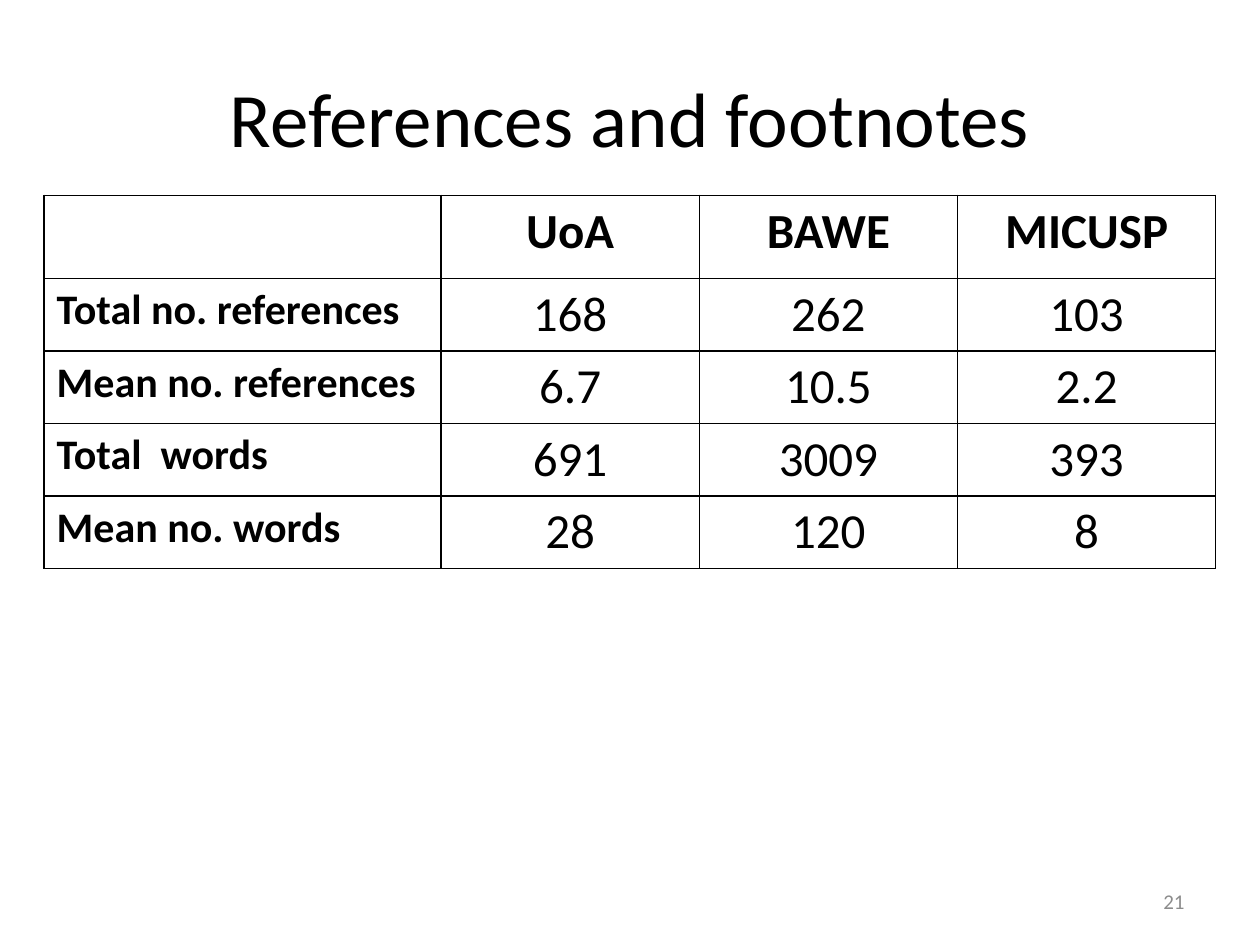
import pptx
import pptx.util
import pptx.dml.color
import pptx.enum.text
import pptx.oxml
import pptx.oxml.ns

Inches, Pt = pptx.util.Inches, pptx.util.Pt
ALIGN = pptx.enum.text.PP_ALIGN
MIDDLE = pptx.enum.text.MSO_ANCHOR.MIDDLE


def style(para, size, color, align, bold=False):
    font = para.font
    font.name, font.size, font.bold = "Calibri", Pt(size), bold
    font.color.rgb = pptx.dml.color.RGBColor.from_string(color)
    para.alignment = align


def outline(cell, color, width):
    """Draw all four borders; they must precede the cell's fill in the XML."""
    props = cell._tc.get_or_add_tcPr()
    for spot, side in enumerate(("lnL", "lnR", "lnT", "lnB")):
        line = pptx.oxml.parse_xml(
            f'<a:{side} {pptx.oxml.ns.nsdecls("a")} w="{Pt(width)}">'
            f'<a:solidFill><a:srgbClr val="{color}"/></a:solidFill></a:{side}>')
        props.insert(spot, line)


deck = pptx.Presentation()
deck.slide_width, deck.slide_height = Inches(10), Inches(7.5)
slide = deck.slides.add_slide(deck.slide_layouts[5])

title = slide.shapes.title
title.left, title.top = Inches(0.5), Inches(0.3)
title.width, title.height = Inches(9), Inches(1.25)
title.text_frame.text = "References and footnotes"
title.text_frame.vertical_anchor = MIDDLE
style(title.text_frame.paragraphs[0], 44, "000000", ALIGN.CENTER)

rows = [
    ("", "UoA", "BAWE", "MICUSP"),
    ("Total no. references", "168", "262", "103"),
    ("Mean no. references", "6.7", "10.5", "2.2"),
    ("Total  words", "691", "3009", "393"),
    ("Mean no. words", "28", "120", "8"),
]
widths = [3.15] + [2.05] * 3
heights = [0.66] + [0.57] * 4
table = slide.shapes.add_table(
    len(rows), len(widths), Inches(0.35), Inches(1.55),
    Inches(sum(widths)), Inches(sum(heights))).table
table.horz_banding = False
for col, width in zip(table.columns, widths):
    col.width = Inches(width)
for row, height in zip(table.rows, heights):
    row.height = Inches(height)

for r, row in enumerate(rows):
    for c, text in enumerate(row):
        cell = table.cell(r, c)
        cell.text = text
        cell.fill.background()
        outline(cell, "000000", 1)
        size, align = (28, ALIGN.CENTER) if c else (24, ALIGN.LEFT)
        style(cell.text_frame.paragraphs[0], size, "000000", align,
              bold=r == 0 or c == 0)

number = slide.shapes.add_textbox(
    Inches(7.17), Inches(6.95), Inches(2.33), Inches(0.4)).text_frame
number.word_wrap = True
number.vertical_anchor = MIDDLE
number.text = "21"
style(number.paragraphs[0], 12, "8C8C8C", ALIGN.RIGHT)

deck.save("out.pptx")
